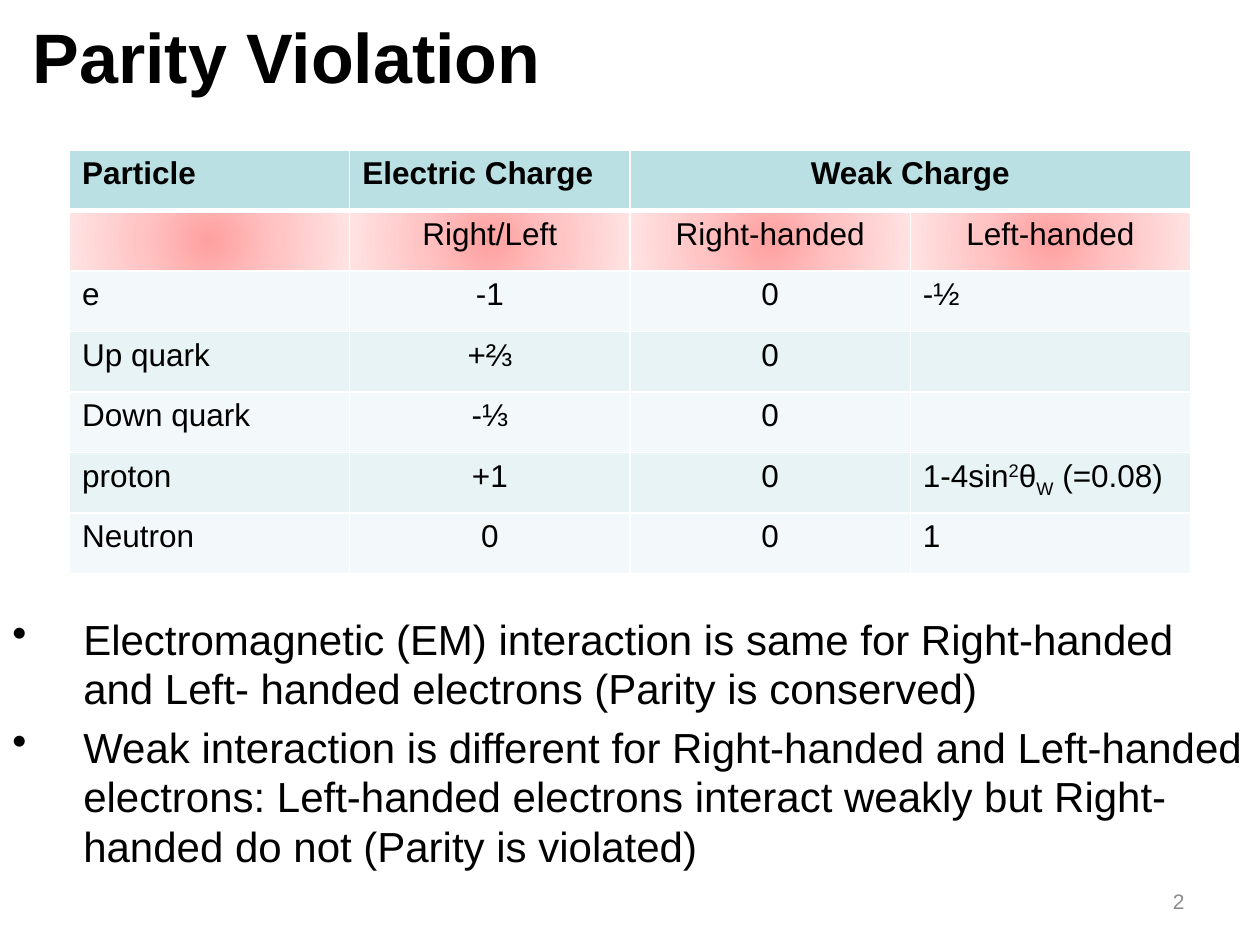
from dataclasses import dataclass

import pptx
import pptx.dml.color
import pptx.enum.text
import pptx.oxml
import pptx.oxml.ns
import pptx.util
from pptx.dml.color import RGBColor
from pptx.enum.text import MSO_ANCHOR, PP_ALIGN
from pptx.util import Cm, Pt

FONT = "Arial"
BLACK = RGBColor(0x00, 0x00, 0x00)
GREY = RGBColor(0x8C, 0x8C, 0x8C)
WHITE = RGBColor(0xFF, 0xFF, 0xFF)
HEADER_FILL = RGBColor(0xBB, 0xE0, 0xE3)
BANDS = (RGBColor(0xF3, 0xF9, 0xFA), RGBColor(0xE7, 0xF3, 0xF4))
GLOW_STOPS = (
    (0, RGBColor(0xFF, 0xA0, 0xA0)),
    (50, RGBColor(0xFF, 0xC5, 0xC5)),
    (100, RGBColor(0xFF, 0xE3, 0xE3)),
)
NAMESPACE = pptx.oxml.ns.nsdecls("a")

ROWS = (
    ("Particle", "Electric Charge", "Weak Charge", ""),
    ("", "Right/Left", "Right-handed", "Left-handed"),
    ("e", "-1", "0", "-½"),
    ("Up quark", "+⅔", "0", ""),
    ("Down quark", "-⅓", "0", ""),
    ("proton", "+1", "0", ""),
    ("Neutron", "0", "0", "1"),
)
CENTERED_HEADINGS = ("Weak Charge", "Left-handed")
PROTON_ROW, LEFT_HANDED_COLUMN = 5, 3
BULLETS = (
    "Electromagnetic (EM) interaction is same for Right-handed and "
    "Left- handed electrons (Parity is conserved)",
    "Weak interaction is different for Right-handed and Left-handed electrons: "
    "Left-handed electrons interact weakly but Right-handed do not (Parity is violated)",
)


@dataclass(frozen=True)
class Span:
    text: str
    baseline: int = 0


PROTON_WEAK_CHARGE = (
    Span("1-4sin"), Span("2", 30), Span("θ"), Span("W", -25), Span(" (=0.08)"),
)


@dataclass(frozen=True)
class TextBox:
    paragraphs: tuple[str, ...]
    left: float
    top: float
    width: float
    height: float
    size: float
    color: RGBColor = BLACK
    bold: bool = False
    align: PP_ALIGN = PP_ALIGN.LEFT
    anchor: MSO_ANCHOR = MSO_ANCHOR.MIDDLE


# The body spans the area behind the table; its top inset starts the text below it.
BODY = TextBox(BULLETS, 0, 3.02, 25.4, 16.03, 24, anchor=MSO_ANCHOR.TOP)
BODY_INSET = Cm(9.35)
TITLE = TextBox(("Parity Violation",), 0.41, 0, 23.09, 2.24, 40, bold=True)
PAGE_NUMBER = TextBox(("2",), 18.21, 17.65, 5.92, 1.02, 12, GREY, align=PP_ALIGN.RIGHT)


def format_paragraph(para, size: float, color: RGBColor, bold: bool, align: PP_ALIGN) -> None:
    para.alignment = align
    for target in (para, *para.runs):
        target.font.name = FONT
        target.font.size = Pt(size)
        target.font.bold = bold
        target.font.color.rgb = color


def add_text(page, spec_box: TextBox):
    box = page.shapes.add_textbox(
        Cm(spec_box.left), Cm(spec_box.top), Cm(spec_box.width), Cm(spec_box.height)
    )
    frame = box.text_frame
    frame.word_wrap = True
    frame.vertical_anchor = spec_box.anchor
    frame.text = "\n".join(spec_box.paragraphs)
    for para in frame.paragraphs:
        format_paragraph(para, spec_box.size, spec_box.color, spec_box.bold, spec_box.align)
    return box


def add_bullet(para) -> None:
    para.space_before = Pt(4.8)
    para.line_spacing = Pt(28.5)
    properties = para._p.get_or_add_pPr()
    properties.set("marL", str(Cm(1.43)))
    properties.set("indent", str(-Cm(1.43)))
    properties.insert_element_before(
        pptx.oxml.parse_xml(f'<a:buChar {NAMESPACE} char="•"/>'),
        "a:tabLst", "a:defRPr", "a:extLst",
    )


def add_borders(cell, row: int) -> None:
    """Draw thin white edges, with a heavier one under the header row."""
    widths = {"L": 1, "R": 1, "T": 3 if row == 1 else 1, "B": 3 if row == 0 else 1}
    for side, width in widths.items():
        cell._tc.get_or_add_tcPr().append(pptx.oxml.parse_xml(
            f'<a:ln{side} {NAMESPACE} w="{Pt(width)}"><a:solidFill>'
            f'<a:srgbClr val="{WHITE}"/></a:solidFill></a:ln{side}>'
        ))


def fill_cell(cell, row: int) -> None:
    if row == 1:
        stops = "".join(
            f'<a:gs pos="{position * 1000}"><a:srgbClr val="{color}"/></a:gs>'
            for position, color in GLOW_STOPS
        )
        cell._tc.get_or_add_tcPr().append(pptx.oxml.parse_xml(
            f'<a:gradFill {NAMESPACE} rotWithShape="1"><a:gsLst>{stops}</a:gsLst>'
            '<a:path path="circle">'
            '<a:fillToRect l="50000" t="50000" r="50000" b="50000"/></a:path></a:gradFill>'
        ))
    else:
        cell.fill.solid()
        cell.fill.fore_color.rgb = HEADER_FILL if row == 0 else BANDS[row % 2]


def add_spans(para, spans: tuple[Span, ...]) -> None:
    for span in spans:
        run = para.add_run()
        run.text = span.text
        if span.baseline:
            run._r.get_or_add_rPr().set("baseline", str(span.baseline * 1000))


def add_charge_table(page) -> None:
    columns = len(ROWS[0])
    table = page.shapes.add_table(
        len(ROWS), columns, Cm(1.4), Cm(3.02), Cm(5.65 * columns), Cm(1.22 * len(ROWS))
    ).table
    for column in table.columns:
        column.width = Cm(5.65)
    for line in table.rows:
        line.height = Cm(1.22)
    for row, texts in enumerate(ROWS):
        for column, text in enumerate(texts):
            cell = table.cell(row, column)
            para = cell.text_frame.paragraphs[0]
            if (row, column) == (PROTON_ROW, LEFT_HANDED_COLUMN):
                add_spans(para, PROTON_WEAK_CHARGE)
            else:
                para.text = text
            centered = text in CENTERED_HEADINGS or (row > 0 and column in (1, 2))
            align = PP_ALIGN.CENTER if centered else PP_ALIGN.LEFT
            format_paragraph(para, 18, BLACK, row == 0, align)
            add_borders(cell, row)
            fill_cell(cell, row)
    table.cell(0, 2).merge(table.cell(0, 3))


def main() -> None:
    deck = pptx.Presentation()
    deck.slide_width, deck.slide_height = Cm(25.4), Cm(19.05)
    page = deck.slides.add_slide(deck.slide_layouts[6])
    body = add_text(page, BODY)
    body.text_frame.margin_top = BODY_INSET
    for para in body.text_frame.paragraphs:
        add_bullet(para)
    add_text(page, TITLE)
    add_charge_table(page)
    add_text(page, PAGE_NUMBER)
    deck.save("out.pptx")


if __name__ == "__main__":
    main()
